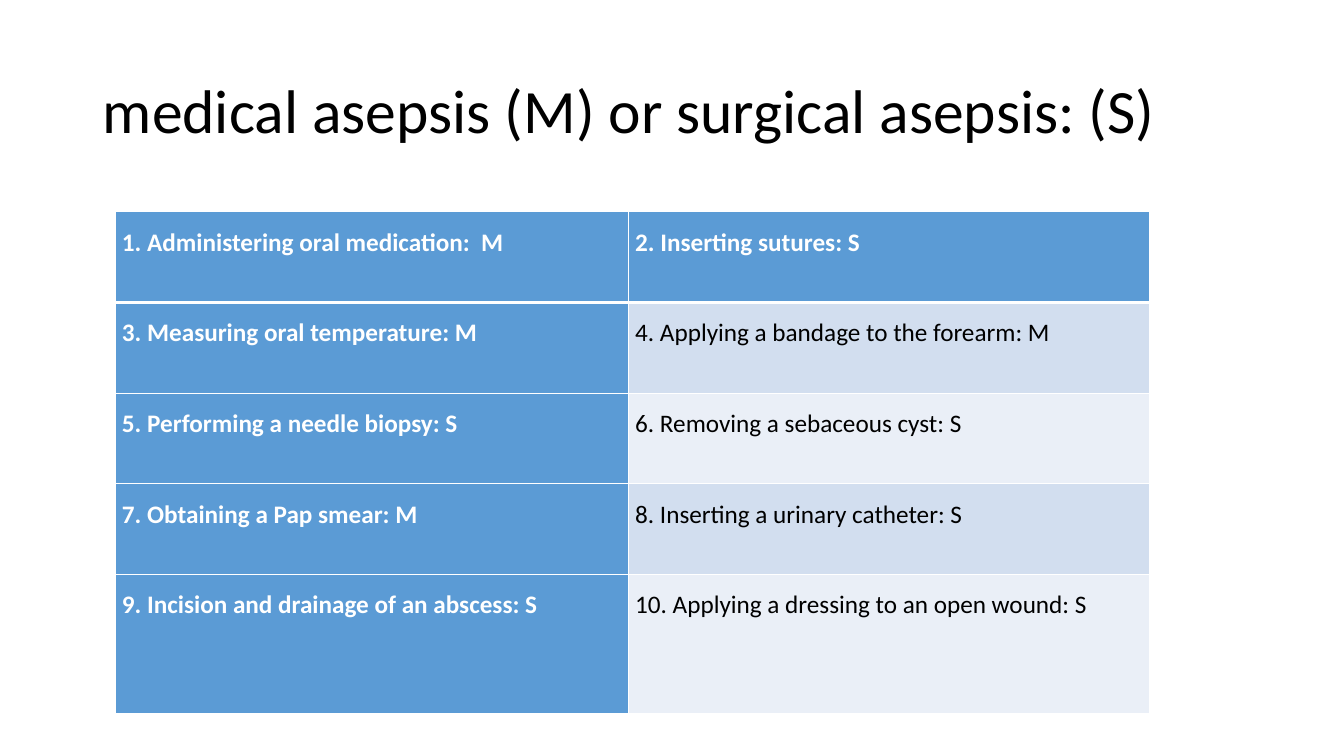
"""Build the slide that sorts procedures into medical or surgical asepsis."""
from dataclasses import dataclass

from lxml.etree import SubElement
from pptx import Presentation
from pptx.dml.color import RGBColor
from pptx.enum.text import MSO_ANCHOR, MSO_AUTO_SIZE, PP_ALIGN
from pptx.oxml.ns import qn
from pptx.util import Inches, Pt

BLACK = RGBColor(0x00, 0x00, 0x00)
WHITE = RGBColor(0xFF, 0xFF, 0xFF)
BLUE = RGBColor(0x5B, 0x9B, 0xD5)
BANDS = (RGBColor(0xEA, 0xEF, 0xF7), RGBColor(0xD2, 0xDE, 0xEF))
FACE = "Calibri"
TITLE = "medical asepsis (M) or surgical asepsis: (S)"
COLS = (5.09, 5.17)


@dataclass(frozen=True)
class Row:
    left: str
    right: str
    height: float = 0.9


ROWS = (
    Row("1. Administering oral medication:  M", "2. Inserting sutures: S"),
    Row("3. Measuring oral temperature: M", "4. Applying a bandage to the forearm: M"),
    Row("5. Performing a needle biopsy: S", "6. Removing a sebaceous cyst: S"),
    Row("7. Obtaining a Pap smear: M", "8. Inserting a urinary catheter: S"),
    Row("9. Incision and drainage of an abscess: S",
        "10. Applying a dressing to an open wound: S", 1.38),
)


def write(frame, text: str, size: int, color: RGBColor, bold: bool, gap: float) -> None:
    frame.text = text
    para = frame.paragraphs[0]
    para.alignment = PP_ALIGN.LEFT
    para.line_spacing = gap
    font = para.runs[0].font
    font.name, font.size, font.bold = FACE, Pt(size), bold
    font.color.rgb = color


def edge(cell, top: int, base: int) -> None:
    props = cell._tc.get_or_add_tcPr()
    widths = {"a:lnL": 1, "a:lnR": 1, "a:lnT": top, "a:lnB": base}
    for spot, (tag, width) in enumerate(widths.items()):
        line = SubElement(props, qn(tag), w=str(Pt(width)))
        fill = SubElement(line, qn("a:solidFill"))
        SubElement(fill, qn("a:srgbClr"), val=str(WHITE))
        props.insert(spot, line)


def style(cell, text: str, row: int, col: int) -> None:
    strong = row == 0 or col == 0
    cell.fill.solid()
    cell.fill.fore_color.rgb = BLUE if strong else BANDS[row % 2]
    cell.margin_left = cell.margin_right = Inches(0.07)
    cell.margin_top = cell.margin_bottom = 0
    write(cell.text_frame, text, 18, WHITE if strong else BLACK, strong, 1.5)
    edge(cell, 3 if row == 1 else 1, 3 if row == 0 else 1)


def head(slide) -> None:
    title = slide.shapes.title
    title.left, title.top = Inches(0.92), Inches(0.4)
    title.width, title.height = Inches(11.5), Inches(1.45)
    frame = title.text_frame
    frame.auto_size = MSO_AUTO_SIZE.NONE
    frame.word_wrap = True
    frame.vertical_anchor = MSO_ANCHOR.MIDDLE
    write(frame, TITLE, 44, BLACK, False, 0.9)


def grid(slide) -> None:
    high = sum(row.height for row in ROWS)
    table = slide.shapes.add_table(
        len(ROWS), len(COLS), Inches(1.14), Inches(2.1),
        Inches(sum(COLS)), Inches(high)).table
    table.first_col = True
    for col, width in enumerate(COLS):
        table.columns[col].width = Inches(width)
    for index, row in enumerate(ROWS):
        table.rows[index].height = Inches(row.height)
        for col, text in enumerate((row.left, row.right)):
            style(table.cell(index, col), text, index, col)


def main() -> None:
    deck = Presentation()
    deck.slide_width, deck.slide_height = Inches(13.33), Inches(7.5)
    slide = deck.slides.add_slide(deck.slide_layouts[5])
    head(slide)
    grid(slide)
    deck.save("out.pptx")


if __name__ == "__main__":
    main()
